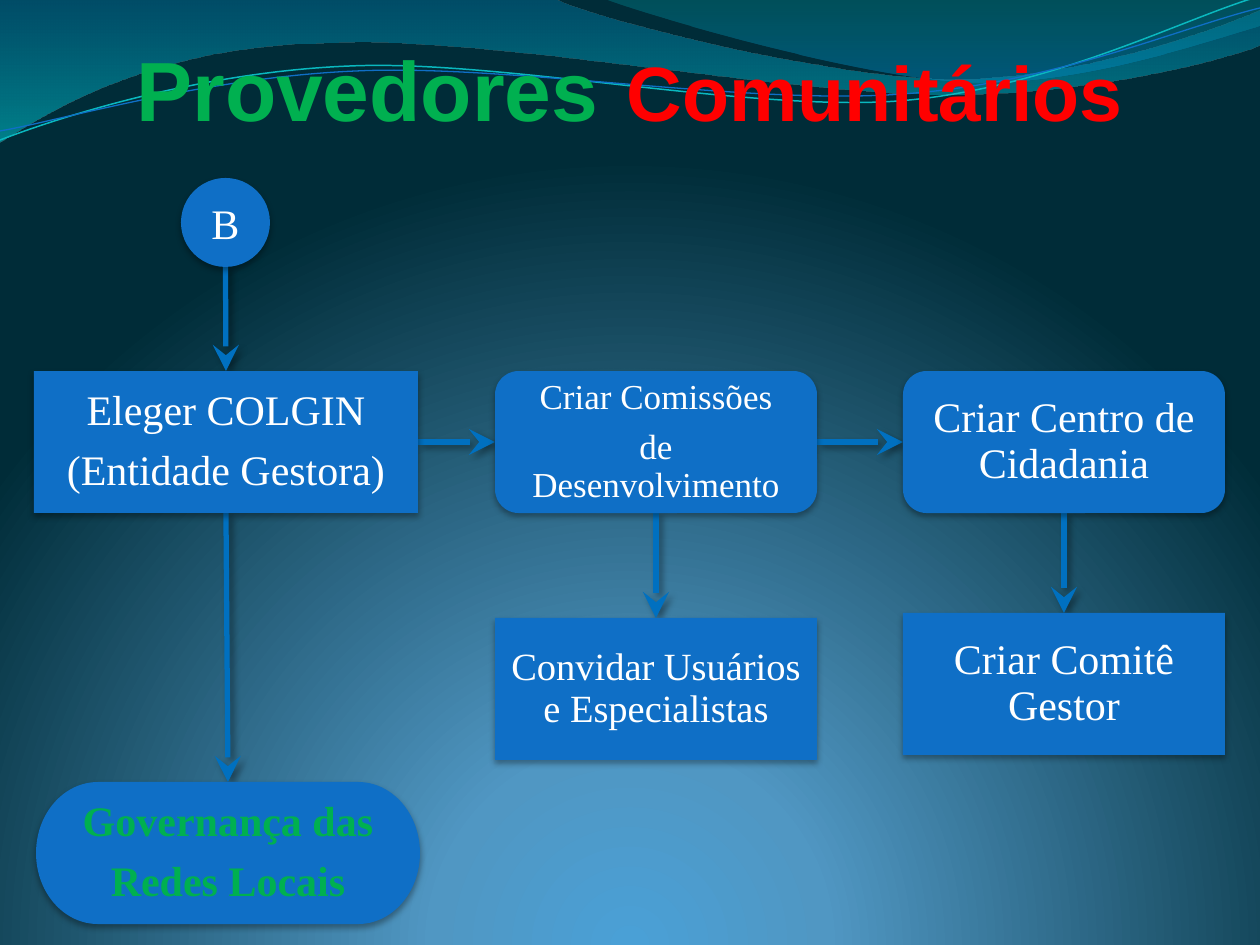
from pptx import Presentation
from pptx.dml.color import RGBColor
from pptx.enum.shapes import MSO_CONNECTOR as Line, MSO_SHAPE as Kind
from pptx.enum.text import MSO_ANCHOR as Anchor, MSO_AUTO_SIZE as Auto, PP_ALIGN as Align
from pptx.oxml import parse_xml
from pptx.oxml.ns import nsdecls, qn
from pptx.util import Emu, Pt

SCALE = 914400 / 126
SERIF = "Times New Roman"
BLUE, GREEN, WHITE = "0F6FC6", "00B050", "FFFFFF"
TOP, LEFT, BOTTOM, RIGHT = range(4)

BAND = [(0, 0), (554, -1),
        ((600, 21), (837, 79), (955, 79)), ((1075, 79), (1207, 33), (1260, 11)),
        (1261, 45),
        ((1239, 55), (1096, 96), (940, 94)), ((784, 94), (481, 35), (324, 43)),
        ((163, 45), (58, 105), (-1, 142))]
CREST = [(604, -1),
         ((641, 14), (859, 78), (969, 82)), ((1079, 86), (1211, 40), (1260, 26)),
         (1260, 0)]
WAVES = [
    ("0AB8BF", 0.85, [(0, 140), ((60, 117), (199, 72), (349, 66)),
                      ((498, 59), (747, 112), (898, 101)),
                      ((1050, 89), (1182, 19), (1257, -3))]),
    ("0F6FC6", 0.75, [(0, 131), ((59, 121), (207, 77), (357, 71)),
                      ((508, 64), (752, 106), (903, 94)),
                      ((1053, 84), (1185, 26), (1260, 8))]),
]


def px(n):
    return Emu(round(n * SCALE))


def rgb(code):
    return RGBColor.from_string(code)


def xml(text):
    head, rest = text.split(">", 1)
    close = "/" if head.endswith("/") else ""
    return parse_xml(f"{head.rstrip('/')} {nsdecls('a', 'p')}{close}>{rest}")


def grad(stops, shade):
    marks = "".join(
        f'<a:gs pos="{pos * 1000}"><a:srgbClr val="{code}">'
        f'<a:alpha val="{alpha * 1000}"/></a:srgbClr></a:gs>'
        for pos, code, alpha in stops)
    return xml(f'<a:gradFill rotWithShape="1"><a:gsLst>{marks}</a:gsLst>{shade}</a:gradFill>')


def paint(slide):
    shade = ('<a:path path="circle"><a:fillToRect l="10000" t="180000" '
             'r="10000" b="50000"/></a:path>')
    back = xml("<p:bg><p:bgPr><a:effectLst/></p:bgPr></p:bg>")
    back[0].insert(0, grad([(0, "4AA0D6", 100), (25, "5097C3", 100),
                            (100, "002C38", 100)], shade))
    slide.element.cSld.insert(0, back)


def curve(shapes, route, close):
    parts = [part if len(part) == 3 else (part,) for part in route]
    dots = [(px(x), px(y)) for part in parts for x, y in part]
    pen = shapes.build_freeform(*dots[0])
    pen.add_line_segments(dots[1:], close=close)
    shape = pen.convert_to_shape()
    shape.shadow.inherit = False
    legs = iter(list(shape.element.iter(qn("a:lnTo"))))
    for part in parts[1:]:
        group = [next(legs) for _ in part]
        if len(group) == 3:
            bend = xml("<a:cubicBezTo/>")
            group[0].addprevious(bend)
            for leg in group:
                bend.append(leg[0])
                leg.getparent().remove(leg)
    return shape


def band(slide, route, stops):
    shape = curve(slide.shapes, route, True)
    shape.line.fill.background()
    fill = grad(stops, '<a:lin ang="5400000" scaled="1"/>')
    shape.element.spPr.find(qn("a:custGeom")).addnext(fill)


def wave(shapes, code, width, route):
    shape = curve(shapes, route, False)
    shape.fill.background()
    shape.line.color.rgb = rgb(code)
    shape.line.width = Pt(width)


def cast(glow, alpha, blur, dist, angle):
    glow.append(xml(
        f'<a:outerShdw blurRad="{Pt(blur)}" dist="{Pt(dist)}" dir="{angle * 60000}" '
        f'rotWithShape="0"><a:srgbClr val="000000"><a:alpha val="{alpha * 1000}"/>'
        '</a:srgbClr></a:outerShdw>'))


def add_run(para, text, size, code, font=SERIF, bold=False):
    run = para.add_run()
    run.text = text
    run.font.size = Pt(size)
    run.font.name = font
    run.font.bold = bold
    run.font.color.rgb = rgb(code)


def node(slide, kind, box, lines, size=24, code=WHITE, bold=False):
    shape = slide.shapes.add_shape(kind, *map(px, box))
    shape.fill.solid()
    shape.fill.fore_color.rgb = rgb(BLUE)
    shape.line.fill.background()
    shape.shadow.inherit = False
    cast(shape.element.spPr.find(qn("a:effectLst")), 32, 3.5, 2.2, 90)
    frame = shape.text_frame
    frame.word_wrap = True
    frame.vertical_anchor = Anchor.MIDDLE
    for i, text in enumerate(lines):
        para = frame.add_paragraph() if i else frame.paragraphs[0]
        para.alignment = Align.CENTER
        add_run(para, text, size, code, bold=bold)
    return shape


def card(slide, kind, box, lines, **style):
    shape = node(slide, kind, box, lines, **style)
    frame = shape.text_frame
    frame.margin_left = frame.margin_right = px(13)
    frame.margin_top = frame.margin_bottom = px(13)
    for para in frame.paragraphs:
        para.line_spacing = 0.9
        para._p.pPr.append(xml('<a:spcAft><a:spcPct val="35000"/></a:spcAft>'))
    return shape


def arrow(slide, start, side, end, goal):
    link = slide.shapes.add_connector(
        Line.STRAIGHT, start.left + start.width // 2, start.top + start.height,
        end.left + end.width // 2, end.top)
    if side is not None:
        link.begin_connect(start, side)
    link.end_connect(end, goal)
    link.line.color.rgb = rgb("0070C0")
    link.line.width = Pt(3)
    props = link.element.spPr
    props.find(qn("a:ln")).append(xml('<a:tailEnd type="stealth" w="lg" len="lg"/>'))
    glow = xml("<a:effectLst/>")
    cast(glow, 40, 4, 3, 45)
    props.append(glow)
    return link


def title(slide):
    box = slide.shapes.add_textbox(px(0), px(0), px(1260), px(152))
    frame = box.text_frame
    frame.word_wrap = True
    frame.auto_size = Auto.SHAPE_TO_FIT_TEXT
    para = frame.paragraphs[0]
    para.alignment = Align.CENTER
    add_run(para, "Provedores", 48, GREEN, "Arial", True)
    add_run(para, " ", 66, GREEN, "Lato", True)
    add_run(para, "Comunitários", 44, "FF0000", "Arial", True)


def main():
    deck = Presentation()
    deck.slide_width, deck.slide_height = px(1260), px(945)
    slide = deck.slides.add_slide(deck.slide_layouts[6])
    paint(slide)
    band(slide, BAND, [(0, "0074A1", 45), (100, "00C6CF", 55)])
    band(slide, CREST, [(0, "00A1A9", 30), (80, "008BBF", 45)])
    group = slide.shapes.add_group_shape()
    for item in WAVES:
        wave(group.shapes, *item)

    wide, slim, high, row = 384, 322, 142, 371
    soft, rect = Kind.FLOWCHART_ALTERNATE_PROCESS, Kind.RECTANGLE
    elect = card(slide, rect, (34, row, wide, high),
                 ["Eleger COLGIN", "(Entidade Gestora)"])
    start = node(slide, Kind.FLOWCHART_CONNECTOR, (181, 178, 89, 89), ["B"])
    board = card(slide, soft, (495, row, slim, high),
                 ["Criar Comissões", "de Desenvolvimento"], size=20)
    centre = card(slide, soft, (903, row, slim, high), ["Criar Centro de Cidadania"])
    guests = card(slide, rect, (495, 618, slim, high),
                  ["Convidar Usuários e Especialistas"], size=22)
    panel = card(slide, rect, (903, 613, slim, high), ["Criar Comitê Gestor"])
    rule = card(slide, Kind.FLOWCHART_TERMINATOR, (36, 782, wide, high),
                ["Governança das", "Redes Locais"], code=GREEN, bold=True)
    for ends in [(elect, BOTTOM, rule, TOP), (centre, BOTTOM, panel, TOP),
                 (board, RIGHT, centre, LEFT), (board, BOTTOM, guests, TOP),
                 (elect, RIGHT, board, LEFT), (start, None, elect, TOP)]:
        elect.element.addprevious(arrow(slide, *ends).element)
    title(slide)
    deck.save("out.pptx")


if __name__ == "__main__":
    main()
